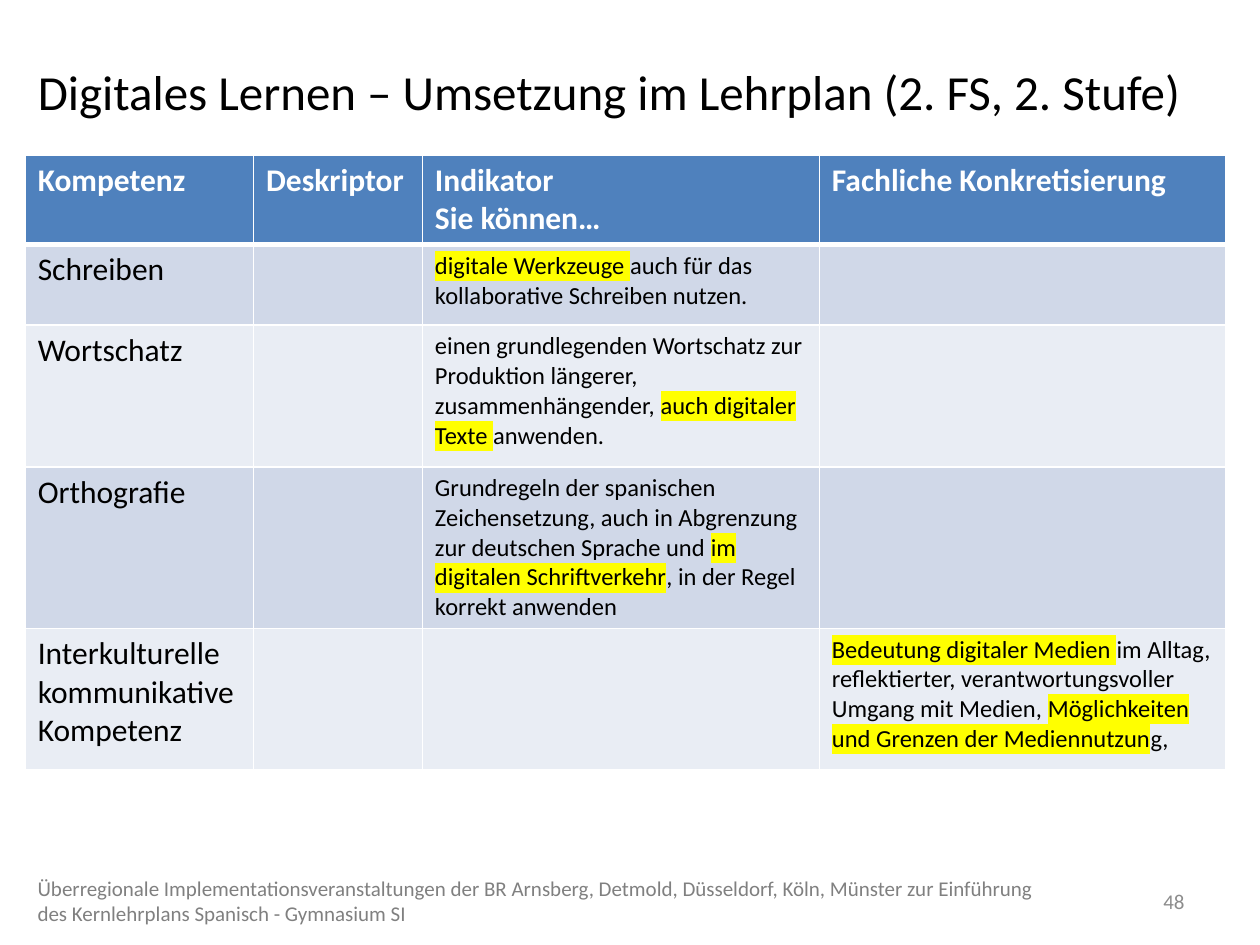
import pptx
import pptx.dml.color
import pptx.enum.text
import pptx.oxml
import pptx.oxml.ns
import pptx.util

Pt = pptx.util.Pt
RGBColor = pptx.dml.color.RGBColor
PP_ALIGN = pptx.enum.text.PP_ALIGN
MSO_ANCHOR = pptx.enum.text.MSO_ANCHOR
qn = pptx.oxml.ns.qn

BLACK = RGBColor(0x00, 0x00, 0x00)
WHITE = RGBColor(0xFF, 0xFF, 0xFF)
HEADER_BLUE = RGBColor(0x4F, 0x81, 0xBD)
BANDS = [RGBColor(0xD0, 0xD8, 0xE8), RGBColor(0xE9, 0xED, 0xF4)]
FOOTER_GRAY = RGBColor(0x80, 0x80, 0x80)
NUMBER_GRAY = RGBColor(0x8C, 0x8C, 0x8C)
YELLOW = RGBColor(0xFF, 0xFF, 0x00)
NAMESPACE = pptx.oxml.ns.nsdecls("a")


def add_run(paragraph, text, size, color, bold=False, highlighted=False):
    run = paragraph.add_run()
    run.text = text
    run.font.name = "Calibri"
    run.font.size = Pt(size)
    run.font.bold = bold
    run.font.color.rgb = color
    if highlighted:
        highlight = pptx.oxml.parse_xml(
            f'<a:highlight {NAMESPACE}><a:srgbClr val="{YELLOW}"/></a:highlight>')
        run.font._element.find(qn("a:solidFill")).addnext(highlight)


def add_border(cell, side, width):
    cell._tc.get_or_add_tcPr().append(pptx.oxml.parse_xml(
        f'<a:ln{side} {NAMESPACE} w="{Pt(width)}"><a:solidFill>'
        f'<a:srgbClr val="{WHITE}"/></a:solidFill></a:ln{side}>'))


presentation = pptx.Presentation()
presentation.slide_width = Pt(720)
presentation.slide_height = Pt(540)
slide = presentation.slides.add_slide(presentation.slide_layouts[5])

# Title
title = slide.shapes.title
title.left, title.top, title.width, title.height = Pt(14.4), Pt(31.7), Pt(692), Pt(41)
title.text_frame.vertical_anchor = MSO_ANCHOR.TOP
title_paragraph = title.text_frame.paragraphs[0]
title_paragraph.alignment = PP_ALIGN.LEFT
add_run(title_paragraph, "Digitales Lernen – Umsetzung im Lehrplan (2. FS, 2. Stufe)", 28, BLACK)

# Table content: header paragraphs, then body cells as (text, highlighted) runs
headers = [["Kompetenz"], ["Deskriptor"], ["Indikator", "Sie können…"],
           ["Fachliche Konkretisierung"]]
competences = [
    ("Schreiben", [("digitale Werkzeuge ", True),
                   ("auch für das kollaborative Schreiben nutzen.", False)], []),
    ("Wortschatz", [("einen grundlegenden Wortschatz zur Produktion längerer, "
                     "zusammenhängender, ", False),
                    ("auch digitaler Texte ", True), ("anwenden.", False)], []),
    ("Orthografie", [("Grundregeln der spanischen Zeichensetzung, auch in Abgrenzung "
                      "zur deutschen Sprache und ", False),
                     ("im digitalen Schriftverkehr", True),
                     (", in der Regel korrekt anwenden", False)], []),
    ("Interkulturelle kommunikative Kompetenz", [],
     [("Bedeutung digitaler Medien ", True),
      ("im Alltag, reflektierter, verantwortungsvoller Umgang mit Medien, ", False),
      ("Möglichkeiten und Grenzen der Mediennutzun", True), ("g,", False)]),
]
column_widths = [130.5, 96.5, 226.8, 232.4]
row_heights = [50, 46, 81, 92, 81]

# Table grid
table = slide.shapes.add_table(len(row_heights), len(column_widths), Pt(14.4), Pt(88.6),
                               Pt(sum(column_widths)), Pt(sum(row_heights))).table
for column, width in zip(table.columns, column_widths):
    column.width = Pt(width)
for row_index, (row, height) in enumerate(zip(table.rows, row_heights)):
    row.height = Pt(height)
    for cell in row.cells:
        add_border(cell, "L", 1)
        add_border(cell, "R", 1)
        add_border(cell, "T", 3 if row_index == 1 else 1)
        add_border(cell, "B", 3 if row_index == 0 else 1)
        cell.fill.solid()
        cell.fill.fore_color.rgb = BANDS[(row_index - 1) % 2] if row_index else HEADER_BLUE

# Header row
for column_index, lines in enumerate(headers):
    text_frame = table.cell(0, column_index).text_frame
    for line_index, line in enumerate(lines):
        paragraph = text_frame.add_paragraph() if line_index else text_frame.paragraphs[0]
        add_run(paragraph, line, 18, WHITE, bold=True)

# Body rows
for row_index, (competence, indicator, detail) in enumerate(competences, start=1):
    add_run(table.cell(row_index, 0).text_frame.paragraphs[0], competence, 18, BLACK)
    for column_index, runs in ((2, indicator), (3, detail)):
        paragraph = table.cell(row_index, column_index).text_frame.paragraphs[0]
        for text, highlighted in runs:
            add_run(paragraph, text, 14, BLACK, highlighted=highlighted)

# Footer and slide number
footer_text = ("Überregionale Implementationsveranstaltungen der BR Arnsberg, Detmold, "
               "Düsseldorf, Köln, Münster zur Einführung des Kernlehrplans Spanisch - "
               "Gymnasium SI")
for text, left, width, color, alignment in (
        (footer_text, 14.4, 595.4, FOOTER_GRAY, PP_ALIGN.LEFT),
        ("48", 638, 46, NUMBER_GRAY, PP_ALIGN.RIGHT)):
    text_box = slide.shapes.add_textbox(Pt(left), Pt(500.4), Pt(width), Pt(28.8))
    text_box.text_frame.word_wrap = True
    text_box.text_frame.vertical_anchor = MSO_ANCHOR.MIDDLE
    paragraph = text_box.text_frame.paragraphs[0]
    paragraph.alignment = alignment
    add_run(paragraph, text, 12, color)

presentation.save("out.pptx")
